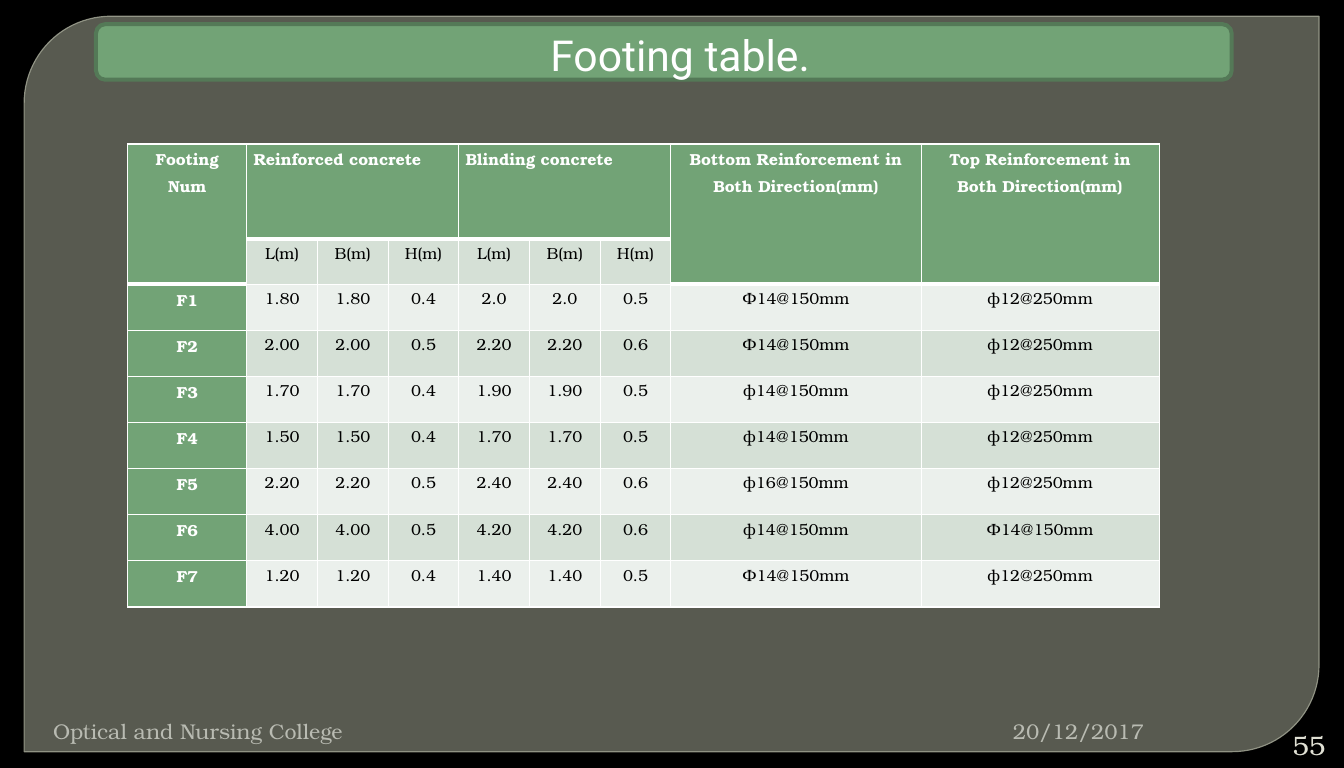
import pptx
import pptx.dml.color
import pptx.enum.shapes
import pptx.enum.text
import pptx.oxml
import pptx.oxml.ns
import pptx.util

Cm = pptx.util.Cm
Pt = pptx.util.Pt
RGBColor = pptx.dml.color.RGBColor
SHAPE = pptx.enum.shapes.MSO_SHAPE
ALIGN = pptx.enum.text.PP_ALIGN
ANCHOR = pptx.enum.text.MSO_ANCHOR

BLACK = RGBColor(0x00, 0x00, 0x00)
WHITE = RGBColor(0xFF, 0xFF, 0xFF)
PANEL = RGBColor(0x88, 0x8B, 0x7B)
PANEL_EDGE = RGBColor(0x9D, 0xA0, 0x90)
GREEN = RGBColor(0x72, 0xA3, 0x76)
DARK_GREEN = RGBColor(0x54, 0x79, 0x57)
BAND_DARK = RGBColor(0xD5, 0xE0, 0xD6)
BAND_LIGHT = RGBColor(0xEB, 0xF0, 0xEC)
FOOTER_GREY = RGBColor(0xB9, 0xBB, 0xB2)
NUMBER_GREY = RGBColor(0xE0, 0xE0, 0xD4)

BODY_FONT = "TeX Gyre Bonum"
TITLE_FONT = "Roboto"

COLUMN_WIDTHS = [3.15] + [1.87] * 6 + [6.62, 6.3]
ROW_HEIGHTS = [2.51, 1.2] + [1.22] * 7
HEADER_MERGES = [(0, 0, 1, 0), (0, 1, 0, 3), (0, 4, 0, 6), (0, 7, 1, 7), (0, 8, 1, 8)]
FOOTING_ROWS = [
    ["Footing Num", "Reinforced concrete", "", "", "Blinding concrete", "", "",
     "Bottom Reinforcement in Both Direction(mm)", "Top Reinforcement in Both Direction(mm)"],
    ["", "L(m)", "B(m)", "H(m)", "L(m)", "B(m)", "H(m)", "", ""],
    ["F1", "1.80", "1.80", "0.4", "2.0", "2.0", "0.5", "Ф14@150mm", "ф12@250mm"],
    ["F2", "2.00", "2.00", "0.5", "2.20", "2.20", "0.6", "Ф14@150mm", "ф12@250mm"],
    ["F3", "1.70", "1.70", "0.4", "1.90", "1.90", "0.5", "ф14@150mm", "ф12@250mm"],
    ["F4", "1.50", "1.50", "0.4", "1.70", "1.70", "0.5", "ф14@150mm", "ф12@250mm"],
    ["F5", "2.20", "2.20", "0.5", "2.40", "2.40", "0.6", "ф16@150mm", "ф12@250mm"],
    ["F6", "4.00", "4.00", "0.5", "4.20", "4.20", "0.6", "ф14@150mm", "Ф14@150mm"],
    ["F7", "1.20", "1.20", "0.4", "1.40", "1.40", "0.5", "Ф14@150mm", "ф12@250mm"],
]


def format_text(paragraph, size, color, font=BODY_FONT, bold=False):
    for run in paragraph.runs:
        run.font.size = Pt(size)
        run.font.name = font
        run.font.bold = bold
        run.font.color.rgb = color


def add_panel(slide, kind, left, top, width, height, fill, line, line_width):
    shape = slide.shapes.add_shape(kind, Cm(left), Cm(top), Cm(width), Cm(height))
    shape.shadow.inherit = False
    shape.fill.solid()
    shape.fill.fore_color.rgb = fill
    shape.line.color.rgb = line
    shape.line.width = Pt(line_width)
    return shape


def set_opacity(color_parent, percent):
    color = color_parent.find(".//" + pptx.oxml.ns.qn("a:srgbClr"))
    color.append(pptx.oxml.parse_xml(
        f'<a:alpha {pptx.oxml.ns.nsdecls("a")} val="{percent * 1000}"/>'))


def add_text(slide, text, left, top, width, height, size, color, alignment,
             font=BODY_FONT, margins=(0.33, 0.15), anchor=ANCHOR.TOP):
    text_frame = slide.shapes.add_textbox(Cm(left), Cm(top), Cm(width), Cm(height)).text_frame
    text_frame.word_wrap = True
    text_frame.vertical_anchor = anchor
    text_frame.margin_left = text_frame.margin_right = Cm(margins[0])
    text_frame.margin_top = text_frame.margin_bottom = Cm(margins[1])
    text_frame.text = text
    paragraph = text_frame.paragraphs[0]
    paragraph.alignment = alignment
    format_text(paragraph, size, color, font)


def set_borders(cell, top_width, bottom_width):
    properties = cell._tc.get_or_add_tcPr()
    for side, width in (("L", 1), ("R", 1), ("T", top_width), ("B", bottom_width)):
        properties.append(pptx.oxml.parse_xml(
            f'<a:ln{side} {pptx.oxml.ns.nsdecls("a")} w="{Pt(width)}">'
            f'<a:solidFill><a:srgbClr val="{WHITE}"/></a:solidFill></a:ln{side}>'))


def fill_cell(cell, text, row, column):
    inner = 1 <= column <= 6
    header = row == 0 or column == 0 or (row == 1 and not inner)
    header_end = 0 if inner else 1
    set_borders(cell, 3 if row == header_end + 1 else 1, 3 if row <= header_end else 1)
    cell.fill.solid()
    cell.fill.fore_color.rgb = GREEN if header else (BAND_DARK if row % 2 else BAND_LIGHT)
    cell.margin_left = cell.margin_right = Cm(0.18)
    cell.margin_top = cell.margin_bottom = 0
    if text:
        cell.text_frame.text = text
        paragraph = cell.text_frame.paragraphs[0]
        paragraph.alignment = ALIGN.LEFT if row == 0 and inner else ALIGN.CENTER
        paragraph.line_spacing = 1.15
        format_text(paragraph, 12, WHITE if header else BLACK, bold=header)


def add_footing_table(slide):
    table = slide.shapes.add_table(
        len(ROW_HEIGHTS), len(COLUMN_WIDTHS), Cm(3.38), Cm(3.81),
        Cm(sum(COLUMN_WIDTHS)), Cm(sum(ROW_HEIGHTS))).table
    table.horz_banding = False
    for column, width in zip(table.columns, COLUMN_WIDTHS):
        column.width = Cm(width)
    for row, height in zip(table.rows, ROW_HEIGHTS):
        row.height = Cm(height)
    for row, texts in enumerate(FOOTING_ROWS):
        for column, text in enumerate(texts):
            fill_cell(table.cell(row, column), text, row, column)
    for top, left, bottom, right in HEADER_MERGES:
        table.cell(top, left).merge(table.cell(bottom, right))


def main():
    presentation = pptx.Presentation()
    presentation.slide_width = Cm(35.56)
    presentation.slide_height = Cm(20.32)
    slide = presentation.slides.add_slide(presentation.slide_layouts[6])
    slide.background.fill.solid()
    slide.background.fill.fore_color.rgb = BLACK

    panel = add_panel(slide, SHAPE.ROUND_2_DIAG_RECTANGLE, 0.64, 0.43, 34.26, 19.46,
                      PANEL, PANEL_EDGE, 0.87)
    panel.adjustments[0] = 0.118
    panel.adjustments[1] = 0
    properties = panel._element.spPr
    set_opacity(properties.find(pptx.oxml.ns.qn("a:solidFill")), 65)
    set_opacity(properties.find(pptx.oxml.ns.qn("a:ln")), 88)

    add_text(slide, "20/12/2017", 26.47, 18.85, 7.5, 0.81, 16, FOOTER_GREY, ALIGN.LEFT)
    add_text(slide, "Optical and Nursing College", 0.4, 18.85, 9, 0.81, 16,
             FOOTER_GREY, ALIGN.RIGHT)
    add_text(slide, "55", 33.6, 19.3, 1.8, 0.81, 20, NUMBER_GREY, ALIGN.RIGHT,
             anchor=ANCHOR.MIDDLE)
    add_panel(slide, SHAPE.ROUNDED_RECTANGLE, 2.54, 0.64, 30.05, 1.47, GREEN, DARK_GREEN, 3)
    add_text(slide, "Footing table.", 2.34, 0.64, 31.32, 1.63, 32, WHITE, ALIGN.CENTER,
             TITLE_FONT, (0.25, 0.13))
    add_footing_table(slide)
    presentation.save("out.pptx")


if __name__ == "__main__":
    main()
